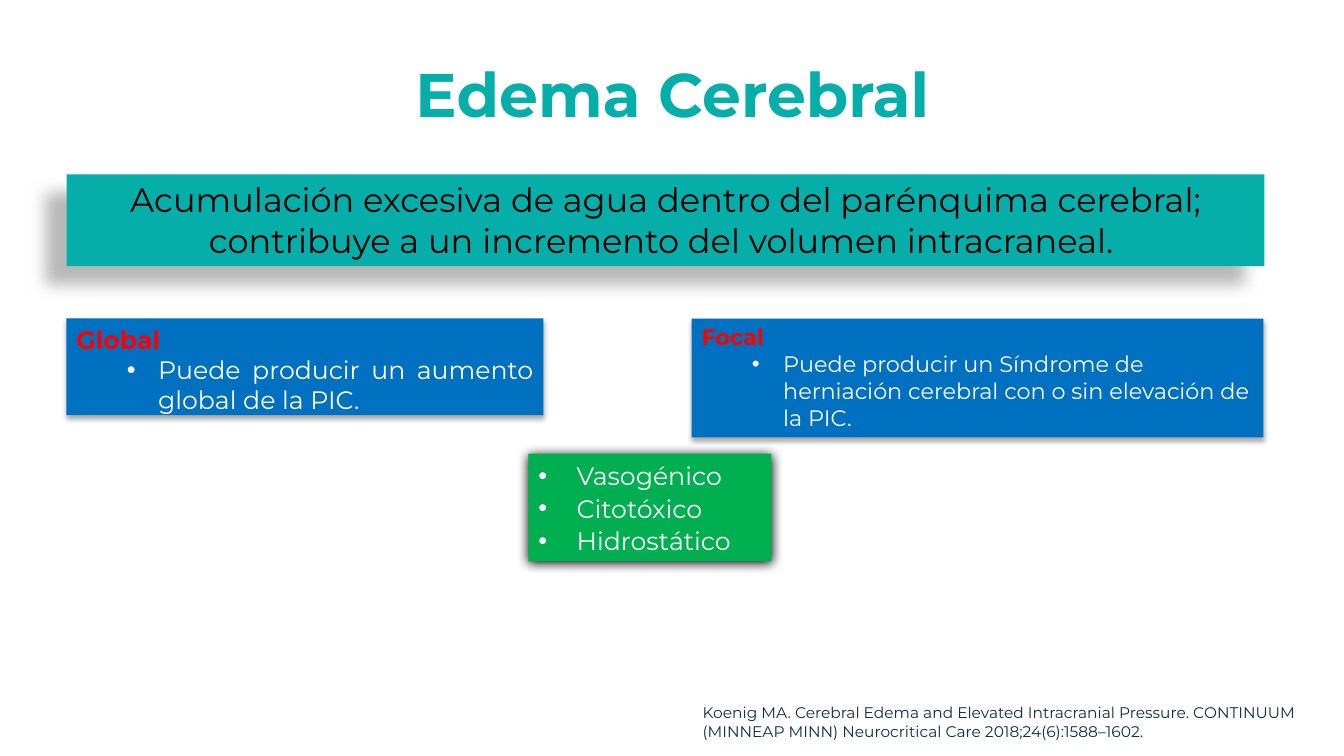
import pptx
import pptx.util
import pptx.dml.color
import pptx.enum.shapes
import pptx.enum.text
import pptx.oxml.ns
import lxml.etree

Inches, Pt = pptx.util.Inches, pptx.util.Pt
ALIGN = pptx.enum.text.PP_ALIGN
ANCHOR = pptx.enum.text.MSO_ANCHOR
FIT = pptx.enum.text.MSO_AUTO_SIZE

TEAL, BLUE, GREEN = "06AEAA", "0070C0", "00B050"
RED, WHITE, BLACK, NAVY = "FF0000", "FFFFFF", "000000", "152B48"
SOFT = (32, 3.5, 2.2, 90)


def color(code):
    return pptx.dml.color.RGBColor.from_string(code)


def add_xml(parent, tag, **attrs):
    node = lxml.etree.SubElement(parent, pptx.oxml.ns.qn(tag))
    for name, value in attrs.items():
        node.set(name, str(value))
    return node


def cast(shape, alpha, blur, dist, angle):
    """Give a shape an outer shadow: percent, points, points, degrees."""
    shape.shadow.inherit = False
    effects = shape._element.spPr.find(pptx.oxml.ns.qn("a:effectLst"))
    outer = add_xml(effects, "a:outerShdw", blurRad=Pt(blur), dist=Pt(dist),
                    dir=angle * 60000, algn="t", rotWithShape=0)
    tint = add_xml(outer, "a:srgbClr", val=BLACK)
    add_xml(tint, "a:alpha", val=alpha * 1000)


def add_bullet(para, left, hang):
    props = para._p.get_or_add_pPr()
    props.set("marL", str(Inches(left)))
    props.set("indent", str(-Inches(hang)))
    add_xml(props, "a:buFont", typeface="Arial")
    add_xml(props, "a:buChar", char="•")


def write(para, text, size, ink, bold=False, **form):
    run = para.add_run()
    run.text = text
    font = {"name": "Montserrat", "size": Pt(size), "bold": bold}
    for name, value in font.items():
        setattr(run.font, name, value)
    run.font.color.rgb = color(ink)
    for name, value in form.items():
        setattr(para, name, value)


def set_frame(shape, **form):
    frame = shape.text_frame
    base = {"word_wrap": True, "auto_size": FIT.SHAPE_TO_FIT_TEXT,
            "vertical_anchor": ANCHOR.TOP}
    for name, value in {**base, **form}.items():
        setattr(frame, name, value)
    return frame


def add_text(slide, box, **form):
    return set_frame(slide.shapes.add_textbox(*map(Inches, box)), **form)


def add_panel(slide, box, fill, shade, **form):
    kind = pptx.enum.shapes.MSO_SHAPE.RECTANGLE
    shape = slide.shapes.add_shape(kind, *map(Inches, box))
    shape.fill.solid()
    shape.fill.fore_color.rgb = color(fill)
    shape.line.fill.background()
    cast(shape, *shade)
    return set_frame(shape, **form)


def add_title(slide, box):
    frame = add_text(slide, box, auto_size=FIT.NONE,
                     vertical_anchor=ANCHOR.MIDDLE)
    write(frame.paragraphs[0], "Edema Cerebral", 44, TEAL, True,
          alignment=ALIGN.CENTER, line_spacing=0.9)


def add_banner(slide, box):
    frame = add_panel(slide, box, TEAL, (28, 11.8, 19.7, 141))
    write(frame.paragraphs[0],
          "Acumulación excesiva de agua dentro del parénquima cerebral; "
          "contribuye a un incremento del volumen intracraneal. ",
          24, BLACK, alignment=ALIGN.CENTER)


def add_type(slide, box, head, text, size, align, **form):
    """Place a blue panel with a red heading and one bullet."""
    frame = add_panel(slide, box, BLUE, SOFT, **form)
    write(frame.paragraphs[0], head, size, RED, True, alignment=align)
    para = frame.add_paragraph()
    add_bullet(para, 0.81, 0.31)
    write(para, text, size, WHITE, alignment=align, level=1)


def add_causes(slide, box, names):
    frame = add_panel(slide, box, GREEN, (100, 8.5, 1, 90))
    for index, name in enumerate(names):
        para = frame.add_paragraph() if index else frame.paragraphs[0]
        add_bullet(para, 0.38, 0.38)
        write(para, name, 18, WHITE, alignment=ALIGN.JUSTIFY,
              line_spacing=1.07)
    para.space_after = Pt(8)


def add_source(slide, box):
    frame = add_text(slide, box)
    write(frame.paragraphs[0],
          "Koenig MA. Cerebral Edema and Elevated Intracranial Pressure. "
          "CONTINUUM (MINNEAP MINN) Neurocritical Care "
          "2018;24(6):1588–1602.", 11, NAVY, alignment=ALIGN.LEFT)


def main():
    deck = pptx.Presentation()
    deck.slide_width, deck.slide_height = Inches(13.33), Inches(7.5)
    slide = deck.slides.add_slide(deck.slide_layouts[6])
    add_title(slide, (0.92, 0.53, 11.5, 0.87))
    add_type(slide, (6.86, 3.16, 5.67, 1.18), "Focal",
             "Puede producir un Síndrome de herniación cerebral con o sin "
             "elevación de la PIC.", 16, ALIGN.LEFT)
    add_type(slide, (0.66, 3.16, 4.73, 0.96), "Global",
             "Puede producir un aumento global de la PIC. ", 18,
             ALIGN.JUSTIFY, vertical_anchor=ANCHOR.MIDDLE, margin_bottom=0)
    add_causes(slide, (5.24, 4.5, 2.41, 1.07),
               ("Vasogénico", "Citotóxico", "Hidrostático"))
    add_banner(slide, (0.66, 1.73, 11.88, 0.91))
    add_source(slide, (6.87, 6.93, 6.46, 0.47))
    deck.save("out.pptx")


if __name__ == "__main__":
    main()
